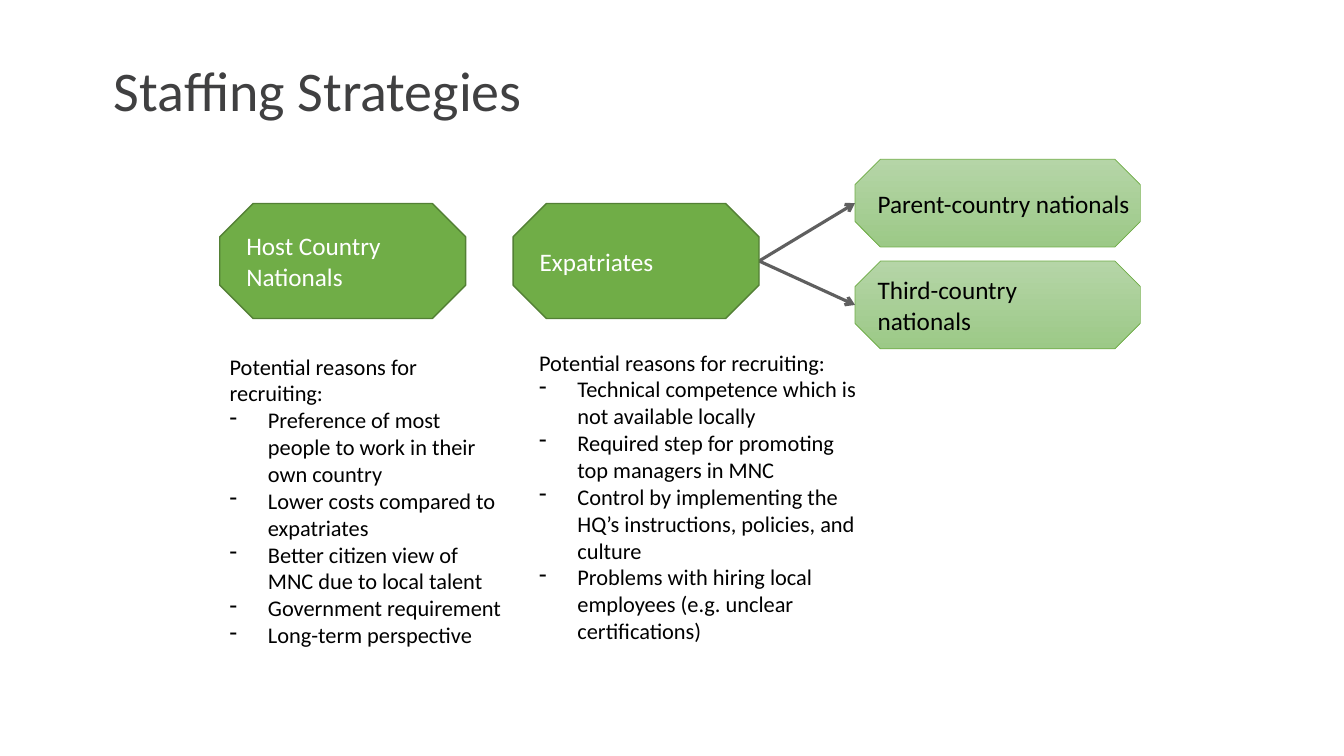
"""Build the Staffing Strategies slide."""
from lxml.etree import SubElement
from pptx import Presentation
from pptx.dml.color import RGBColor
from pptx.enum.shapes import MSO_CONNECTOR, MSO_SHAPE
from pptx.enum.text import MSO_ANCHOR, MSO_AUTO_SIZE, PP_ALIGN
from pptx.oxml.ns import qn
from pptx.util import Inches, Pt

HUES = {
    "title": "404041", "text": "000000", "white": "FFFFFF",
    "green": "70AD47", "edge": "538035", "arrow": "5F5F5F",
    "top": "B5D5A7", "base": "9CC987",
}


def hue(name):
    return RGBColor.from_string(HUES[name])


class Deck:
    """Hold the style and slide; lengths are percent of the slide's size."""

    font = "Calibri"

    def __init__(self):
        self.file = Presentation()
        self.file.slide_width = Inches(13.33)
        self.file.slide_height = Inches(7.5)
        self.slide = self.file.slides.add_slide(self.file.slide_layouts[5])

    def place(self, x, y):
        wide, high = self.file.slide_width, self.file.slide_height
        return int(wide * x / 100), int(high * y / 100)

    def label(self, frame, lines, size, color, dash=False):
        frame.text = "\n".join(lines)
        for row, para in enumerate(frame.paragraphs):
            para.alignment = PP_ALIGN.LEFT
            if dash and row:
                props = para._p.get_or_add_pPr()
                props.set("marL", str(Inches(0.38)))
                props.set("indent", str(-Inches(0.38)))
                SubElement(props, qn("a:buChar")).set("char", "-")
            para.font.name = self.font
            para.font.size = Pt(size)
            para.font.color.rgb = hue(color)

    def title(self, text, x, y, w, h):
        shape = self.slide.shapes.title
        shape.left, shape.top = self.place(x, y)
        shape.width, shape.height = self.place(w, h)
        frame = shape.text_frame
        frame.margin_left = frame.margin_right = 0
        frame.margin_top = frame.margin_bottom = 0
        frame.vertical_anchor = MSO_ANCHOR.TOP
        frame.auto_size = MSO_AUTO_SIZE.NONE
        self.label(frame, [text], 40, "title")

    def node(self, lines, x, y, w, h, pale=False):
        shape = self.slide.shapes.add_shape(
            MSO_SHAPE.OCTAGON, *self.place(x, y), *self.place(w, h))
        shape.adjustments[0] = 0.29
        shape.shadow.inherit = False
        if pale:
            shape.fill.gradient()
            shape.fill.gradient_angle = 270
            for stop, name in zip(shape.fill.gradient_stops, ("top", "base")):
                stop.color.rgb = hue(name)
        else:
            shape.fill.solid()
            shape.fill.fore_color.rgb = hue("green")
        shape.line.color.rgb = hue("green" if pale else "edge")
        shape.line.width = Pt(0.5 if pale else 1)
        frame = shape.text_frame
        frame.word_wrap = False
        frame.vertical_anchor = MSO_ANCHOR.MIDDLE
        self.label(frame, lines, 18, "text" if pale else "white")

    def arrow(self, x, y, end, drop):
        link = self.slide.shapes.add_connector(
            MSO_CONNECTOR.STRAIGHT, *self.place(x, y), *self.place(end, drop))
        link.line.color.rgb = hue("arrow")
        link.line.width = Pt(2.25)
        SubElement(link.line._get_or_add_ln(), qn("a:tailEnd")).set("type", "arrow")
        SubElement(link._element.spPr, qn("a:effectLst"))

    def notes(self, points, x, y, w, h):
        box = self.slide.shapes.add_textbox(*self.place(x, y), *self.place(w, h))
        box.text_frame.word_wrap = True
        lines = ["Potential reasons for recruiting:", *points]
        self.label(box.text_frame, lines, 16, "text", dash=True)


def main():
    deck = Deck()
    deck.title("Staffing Strategies", 8.48, 7.33, 69.92, 12.53)

    host, expat, right = 16.35, 38.18, 63.62
    top, wide, high = 26.93, 18.3, 15.2
    kinds = [["Parent-country nationals"], ["Third-country", "nationals"]]
    for row, lines in enumerate(kinds):
        y, tall = 21.07 + 13.47 * row, 11.6
        deck.node(lines, right, y, 21.23, tall, pale=True)
        deck.arrow(expat + wide, top + high / 2, right, y + tall / 2)
    deck.node(["Host Country", "Nationals"], host, top, wide, high)
    deck.node(["Expatriates"], expat, top, wide, high)

    deck.notes([
        "Preference of most people to work in their own country",
        "Lower costs compared to expatriates",
        "Better citizen view of MNC due to local talent",
        "Government requirement",
        "Long-term perspective",
    ], host, 46, 21.83, 44.4)
    deck.notes([
        "Technical competence which is not available locally",
        "Required step for promoting top managers in MNC",
        "Control by implementing the HQ’s instructions, policies, and culture",
        "Problems with hiring local employees (e.g. unclear certifications)",
    ], 39.38, 45.47, 25.96, 44.4)
    deck.file.save("out.pptx")


if __name__ == "__main__":
    main()
